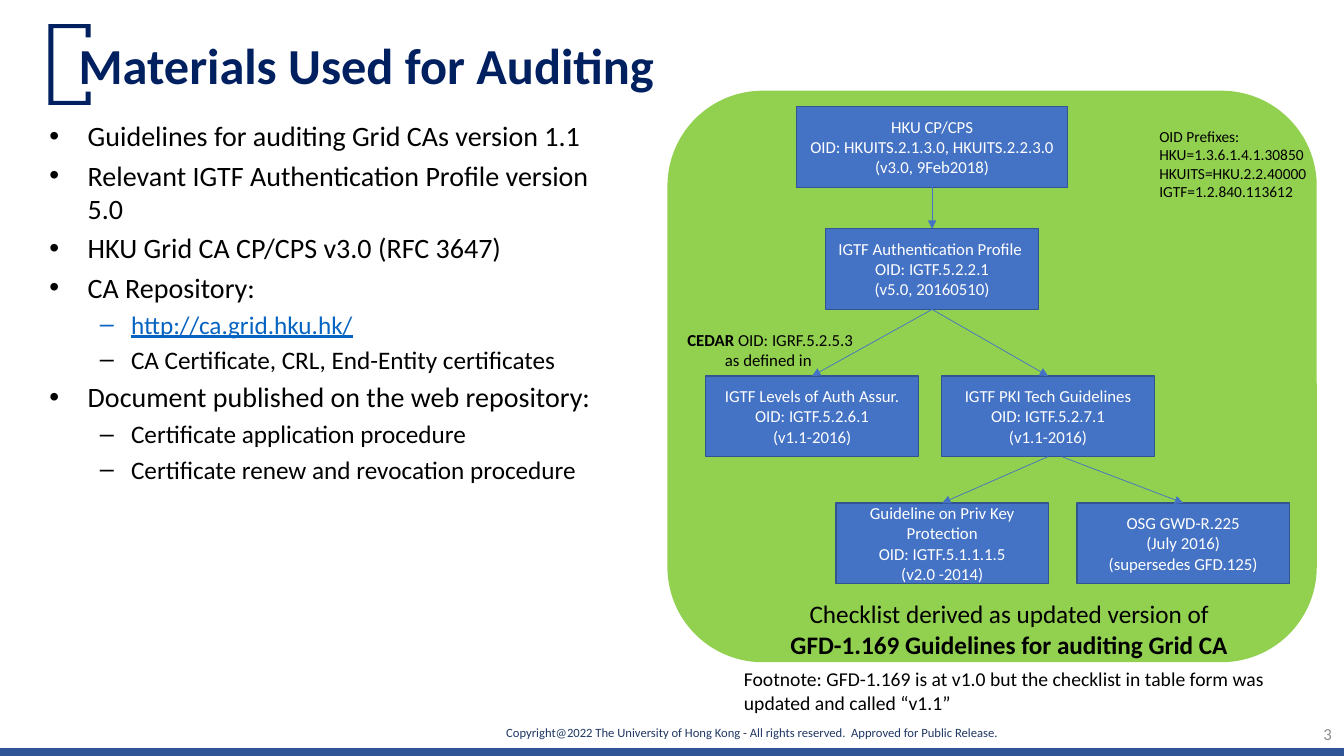
from pptx import Presentation, util as u
from pptx.enum import shapes, text
from pptx.dml.color import RGBColor
from lxml import etree

C = {"navy": "002060", "footer": "203864", "bar": "2F5597", "grey": "8C8C8C",
     "green": "92D050", "box": "4472C4", "edge": "325491", "link": "0563C1",
     "black": "000000", "white": "FFFFFF"}
A = "{http://schemas.openxmlformats.org/drawingml/2006/main}"
LEFT, CENTER, RIGHT = text.PP_ALIGN.LEFT, text.PP_ALIGN.CENTER, text.PP_ALIGN.RIGHT
TOP, MIDDLE = text.MSO_ANCHOR.TOP, text.MSO_ANCHOR.MIDDLE

prs = Presentation()
prs.slide_width, prs.slide_height = u.Inches(13.33), u.Inches(7.5)
COL, ROW = prs.slide_width / 133.3, prs.slide_height / 75
s = prs.slides.add_slide(prs.slide_layouts[1])


def grid(*cells):
    return [round(n * (ROW if i % 2 else COL)) for i, n in enumerate(cells)]


def write(sp, lines, size, color, align=LEFT, anchor=TOP):
    tf = sp.text_frame
    tf.word_wrap, tf.vertical_anchor = True, anchor
    tf.auto_size = text.MSO_AUTO_SIZE.NONE
    for i, line in enumerate(lines):
        p = tf.add_paragraph() if i else tf.paragraphs[0]
        p.alignment = align
        for words, bold in [(line, False)] if isinstance(line, str) else line:
            r = p.add_run()
            r.text = words
            fmt = {"name": "Calibri", "size": u.Pt(size), "bold": bold}
            for key, value in fmt.items():
                setattr(r.font, key, value)
            r.font.color.rgb = RGBColor.from_string(C[color])
    return tf


sp = s.shapes.add_textbox(*grid(50.2, 71, 49.1, 3.3))
tf = write(sp, ["Copyright@2022 The University of Hong Kong - All rights reserved.  Approved for Public Release."],
           9, "footer", anchor=MIDDLE)
for side in ("left", "top", "right", "bottom"):
    setattr(tf, f"margin_{side}", 0)

bar = s.shapes.add_connector(shapes.MSO_CONNECTOR.STRAIGHT, *grid(0, 74.6, 133.3, 74.6))
bar.line.color.rgb, bar.line.width = RGBColor.from_string(C["bar"]), u.Pt(6)
etree.SubElement(bar._element.spPr, A + "effectLst")

sp = s.shapes.add_textbox(*grid(103.1, 70.8, 30, 4))
write(sp, ["3"], 12, "grey", RIGHT, MIDDLE)

panel = s.shapes.add_shape(shapes.MSO_SHAPE.ROUNDED_RECTANGLE, *grid(66.2, 9, 64.4, 56.7))
outline = [(9, 2.4), (9, 3.7), (8.5, 3.7), (8.5, 2.8), (5.3, 2.8), (5.3, 10),
           (8.5, 10), (8.5, 9.1), (9, 9.1), (9, 10.4), (4.8, 10.4)]
fb = s.shapes.build_freeform(*grid(4.8, 2.4))
fb.add_line_segments([grid(*point) for point in outline])
bracket = fb.convert_to_shape()
for sp, color in ((panel, "green"), (bracket, "navy")):
    sp.shadow.inherit = False
    sp.fill.solid()
    sp.fill.fore_color.rgb = RGBColor.from_string(C[color])
    sp.line.fill.background()

title, body = s.placeholders[0], s.placeholders[1]
for sp, place in ((title, (6.8, 2.2, 93.3, 9.1)), (body, (3.9, 11.3, 57.9, 38.4))):
    sp.left, sp.top, sp.width, sp.height = grid(*place)
tf = write(title, [[("Materials Used for Auditing", True)]], 36, "navy", anchor=MIDDLE)
tf.paragraphs[0].line_spacing = 0.9

materials = [
    (0, "Guidelines for auditing Grid CAs version 1.1"),
    (0, "Relevant IGTF Authentication Profile version 5.0"),
    (0, "HKU Grid CA CP/CPS v3.0 (RFC 3647)"),
    (0, "CA Repository:"),
    (1, "http://ca.grid.hku.hk/"),
    (1, "CA Certificate, CRL, End-Entity certificates"),
    (0, "Document published on the web repository:"),
    (1, "Certificate application procedure"),
    (1, "Certificate renew and revocation procedure"),
]
tf = write(body, [words for level, words in materials], 20, "black")
for i, (p, (level, words)) in enumerate(zip(tf.paragraphs, materials)):
    p.level = level
    size, margin, hang, mark = ((20, 3.8, 3.8, "•"), (18, 8.1, 3.1, "–"))[level]
    pPr = p._p.get_or_add_pPr()
    pPr.set("marL", str(round(margin * COL)))
    pPr.set("indent", str(round(-hang * COL)))
    etree.SubElement(pPr, A + "buFont", typeface="Arial")
    etree.SubElement(pPr, A + "buChar", char=mark)
    p.space_before = u.Pt(size * 0.2 if i else 0)
    font = p.runs[0].font
    font.size = u.Pt(size)
    if words.startswith("http"):
        font.underline = True
        font.color.rgb = RGBColor.from_string(C["link"])

documents = {
    "cps": (79, 10.6, 26.9, ["HKU CP/CPS", "OID: HKUITS.2.1.3.0, HKUITS.2.2.3.0", "(v3.0, 9Feb2018)"]),
    "profile": (81.9, 22.7, 21.1, ["IGTF Authentication Profile ", "OID: IGTF.5.2.2.1", "(v5.0, 20160510)"]),
    "levels": (70, 37.3, 21.1, ["IGTF Levels of Auth Assur.", "OID: IGTF.5.2.6.1", "(v1.1-2016)"]),
    "pki": (93.4, 37.3, 21.1, ["IGTF PKI Tech Guidelines", "OID: IGTF.5.2.7.1", "(v1.1-2016)"]),
    "key": (82.9, 49.9, 21.1, ["Guideline on Priv Key Protection", "OID: IGTF.5.1.1.1.5", "(v2.0 -2014)"]),
    "osg": (106.8, 49.9, 21.1, ["OSG GWD-R.225", "(July 2016)", "(supersedes GFD.125)"]),
}
boxes = {}
for name, (x, y, w, lines) in documents.items():
    sp = boxes[name] = s.shapes.add_shape(shapes.MSO_SHAPE.RECTANGLE, *grid(x, y, w, 8))
    sp.shadow.inherit = False
    sp.fill.solid()
    sp.fill.fore_color.rgb = RGBColor.from_string(C["box"])
    sp.line.color.rgb, sp.line.width = RGBColor.from_string(C["edge"]), u.Pt(1)
    write(sp, lines, 12, "white", CENTER, MIDDLE)

for parent, child in (("cps", "profile"), ("profile", "levels"), ("profile", "pki"),
                      ("pki", "key"), ("pki", "osg")):
    arrow = s.shapes.add_connector(shapes.MSO_CONNECTOR.STRAIGHT, *grid(105.3, 45.3, 117.3, 49.9))
    if child != "osg":
        arrow.begin_connect(boxes[parent], 2)
    arrow.end_connect(boxes[child], 0)
    arrow.line.color.rgb, arrow.line.width = RGBColor.from_string(C["box"]), u.Pt(0.5)
    etree.SubElement(arrow.line._get_or_add_ln(), A + "tailEnd", type="triangle")
    etree.SubElement(arrow._element.spPr, A + "effectLst")

notes = [
    ((114, 12.1, 19.3, 8.4), 11, LEFT,
     ["OID Prefixes:", "HKU=1.3.6.1.4.1.30850", "HKUITS=HKU.2.2.40000", "IGTF=1.2.840.113612"]),
    ((73.5, 58.9, 53.2, 7.1), 18, CENTER,
     ["Checklist derived as updated version of", [("GFD-1.169 Guidelines for auditing Grid CA", True)]]),
    ((72.8, 65.7, 60.5, 5.7), 14, LEFT,
     ["Footnote: GFD-1.169 is at v1.0 but the checklist in table form was updated and called “v1.1”"]),
    ((66.7, 32.2, 19.4, 5), 12, CENTER,
     [[("CEDAR ", True), ("OID: IGRF.5.2.5.3", False)], "as defined in "]),
]
for place, size, align, lines in notes:
    write(s.shapes.add_textbox(*grid(*place)), lines, size, "black", align)

prs.save("out.pptx")
